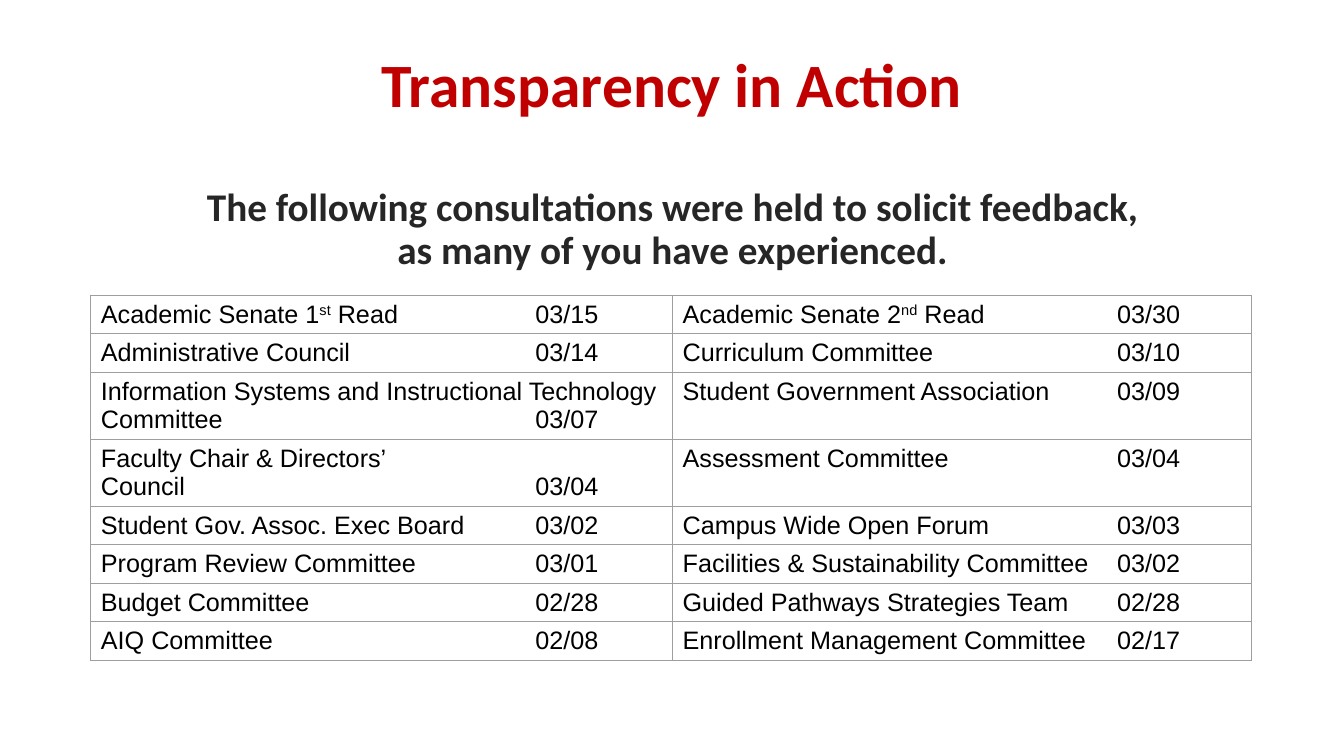
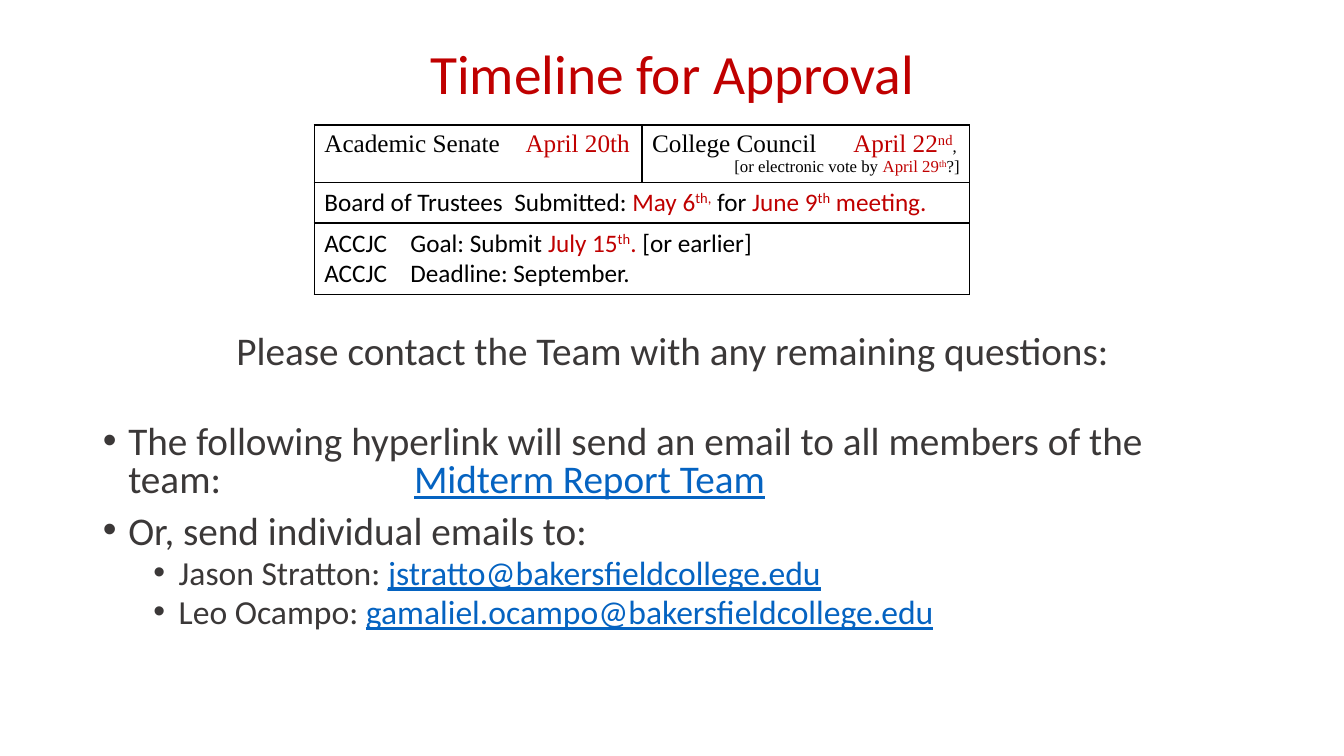
"""Build two slides: the consultations held and the timeline for approval."""
from lxml import etree
from pptx import Presentation
from pptx import util as u
from pptx.dml.color import RGBColor
from pptx.enum import text
from pptx.oxml.ns import qn

COLORS = {"red": "C00000", "dark": "262626", "gray": "3B3838", "link": "0563C1",
          "black": "000000", "rule": "9E9E9E"}
ALIGN = text.PP_ALIGN
LEFT, WIDTH, TITLE_TOP = 2.34, 29.21, 1.02

RED = {"color": "red"}
RED_UP = {"color": "red", "raised": True}
UP = {"raised": True}
LINK = {"color": "link", "underline": True}

CONSULTATIONS = [
    (["Academic Senate 1", ("st", UP), " Read\t03/15"],
     ["Academic Senate 2", ("nd", UP), " Read\t03/30"]),
    (["Administrative Council\t03/14"], ["Curriculum Committee\t03/10"]),
    (["Information Systems and Instructional Technology Committee\t03/07"],
     ["Student Government Association\t03/09"]),
    (["Faculty Chair & Directors’\nCouncil\t03/04"], ["Assessment Committee\t03/04"]),
    (["Student Gov. Assoc. Exec Board\t03/02"], ["Campus Wide Open Forum\t03/03"]),
    (["Program Review Committee\t03/01"], ["Facilities & Sustainability Committee\t03/02"]),
    (["Budget Committee\t02/28"], ["Guided Pathways Strategies Team\t02/28"]),
    (["AIQ Committee\t02/08"], ["Enrollment Management Committee\t02/17"]),
]
TWO_LINE_ROWS = (2, 3)

SERIF = {"font": "Times New Roman", "tab": 5.07}
APPROVALS = [
    (0, 0, [(["Academic Senate\t", ("April 20th", RED)], SERIF)]),
    (0, 1, [(["College Council\t", ("April 22", RED), ("nd", RED_UP), (",", {"size": 12})], SERIF),
            (["[or electronic vote by ", ("April 29", RED), ("th", RED_UP), "?]"],
             {"font": "Times New Roman", "size": 12, "align": ALIGN.RIGHT})]),
    (1, 0, [(["Board of Trustees\tSubmitted: ", ("May 6", RED), ("th,", RED_UP), " for ",
              ("June 9", RED), ("th", RED_UP), (" meeting.", RED)], {"tab": 4.79})]),
    (2, 0, [(["ACCJC\tGoal: Submit ", ("July 15", RED), ("th", RED_UP), (". ", RED),
              "[or earlier]"], {"tab": 2.17}),
            (["ACCJC\tDeadline: September."], {"tab": 2.17})]),
]

TOP_ITEM = {"size": 28, "bullet": True, "indent": 0.64}
SUB_ITEM = {"size": 24, "bullet": True, "indent": 1.91, "level": 1, "before": 5}
CONTACTS = [
    (["Please contact the Team with any remaining questions:"],
     {"size": 28, "align": ALIGN.CENTER, "bullet": False}),
    (["The following hyperlink will send an email to all members of the team:\t",
      ("Midterm Report Team", LINK)], {**TOP_ITEM, "before": 37.5, "tab": 7.84}),
    (["Or, send individual emails to:"], {**TOP_ITEM, "before": 10}),
    (["Jason Stratton: ", ("jstratto@bakersfieldcollege.edu", LINK)], SUB_ITEM),
    (["Leo Ocampo: ", ("gamaliel.ocampo@bakersfieldcollege.edu", LINK)], SUB_ITEM),
]


def place(box, left, top, width, height):
    """Move and size a box, in centimetres."""
    box.left, box.top, box.width, box.height = map(u.Cm, (left, top, width, height))


def format_span(span, size, font, color, bold=False, underline=False, raised=False):
    """Set the character format of one run."""
    span.font.size, span.font.name = u.Pt(size), font
    span.font.bold, span.font.underline = bold, underline
    span.font.color.rgb = RGBColor.from_string(COLORS[color])
    if raised:
        span.font._element.set("baseline", "30000")


def write(para, spans, size=18, font="Calibri", color="black", bold=False, align=ALIGN.LEFT,
          spacing=None, before=0, level=0, indent=0, bullet=None, tab=None):
    """Fill a paragraph with plain or formatted spans."""
    props = para._p.get_or_add_pPr()
    if bullet is not None:
        props.set("marL", str(u.Cm(indent)))
        props.set("indent", str(-u.Cm(0.64) if bullet else 0))
        if bullet:
            etree.SubElement(props, qn("a:buFont"), typeface="Arial")
            etree.SubElement(props, qn("a:buChar"), char="•")
        else:
            etree.SubElement(props, qn("a:buNone"))
    if tab:
        stops = etree.SubElement(props, qn("a:tabLst"))
        etree.SubElement(stops, qn("a:tab"), pos=str(u.Cm(tab)), algn="l")
    para.level, para.alignment = level, align
    para.space_before = u.Pt(before)
    if spacing:
        para.line_spacing = spacing
    base = {"size": size, "font": font, "color": color, "bold": bold}
    for item in spans:
        words, extra = (item, {}) if isinstance(item, str) else item
        for number, line in enumerate(words.split("\n")):
            if number:
                para.add_line_break()
            span = para.add_run()
            span.text = line
            format_span(span, **{**base, **extra})


def write_all(frame, paragraphs, **shared):
    """Write (spans, format) paragraphs into a text frame."""
    for number, (spans, style) in enumerate(paragraphs):
        para = frame.add_paragraph() if number else frame.paragraphs[0]
        write(para, spans, **{**shared, **style})


def fill_placeholder(box, top, height, anchor, paragraphs, **shared):
    """Place a title or body placeholder and write its text."""
    place(box, LEFT, top, WIDTH, height)
    frame = box.text_frame
    frame.word_wrap, frame.auto_size = True, text.MSO_AUTO_SIZE.NONE
    frame.vertical_anchor = anchor
    write_all(frame, paragraphs, **shared)


def add_title(slide, height, paragraphs):
    """Write the centred title in the shared style."""
    fill_placeholder(slide.shapes.title, TITLE_TOP, height, text.MSO_ANCHOR.MIDDLE, paragraphs,
                     color="red", align=ALIGN.CENTER, spacing=0.9)


def add_grid(slide, left, top, widths, heights, color, line):
    """Add an unfilled table with ruled cells."""
    frame = slide.shapes.add_table(len(heights), len(widths), u.Cm(left), u.Cm(top),
                                   u.Cm(sum(widths)), u.Cm(sum(heights)))
    table = frame.table
    table.first_row = table.horz_banding = False
    for column, width in zip(table.columns, widths):
        column.width = u.Cm(width)
    for row, height in zip(table.rows, heights):
        row.height = u.Cm(height)
    for cell in table.iter_cells():
        props = cell._tc.get_or_add_tcPr()
        for side in ("lnL", "lnR", "lnT", "lnB"):
            edge = etree.SubElement(props, qn(f"a:{side}"), w=str(u.Pt(line)))
            paint = etree.SubElement(edge, qn("a:solidFill"))
            etree.SubElement(paint, qn("a:srgbClr"), val=COLORS[color])
        cell.fill.background()
    return table


def build_consultations(deck):
    """Build the slide that lists the consultations."""
    slide = deck.slides.add_slide(deck.slide_layouts[5])
    intro = "The following consultations were held to solicit feedback,\nas many of you have experienced."
    add_title(slide, 6.2, [
        (["Transparency in Action"], {"size": 44, "bold": True}),
        ([intro], {"size": 28, "bold": True, "color": "dark", "before": 48}),
    ])
    heights = [1.69 if row in TWO_LINE_ROWS else 0.97 for row in range(len(CONSULTATIONS))]
    table = add_grid(slide, 2.29, 7.44, [14.66, 14.6], heights, "rule", 0.75)
    for row, pair in enumerate(CONSULTATIONS):
        for column, spans in enumerate(pair):
            write(table.cell(row, column).text_frame.paragraphs[0], spans, font="Arial", tab=10.95)


def build_timeline(deck):
    """Build the slide with the approval dates and the contacts."""
    slide = deck.slides.add_slide(deck.slide_layouts[1])
    add_title(slide, 1.8, [(["Timeline for Approval"], {"size": 39.6})])
    fill_placeholder(slide.placeholders[1], 8.33, 8.1, text.MSO_ANCHOR.TOP, CONTACTS,
                     color="gray", spacing=0.8)
    table = add_grid(slide, 7.92, 3.15, [8.26, 8.26], [1.44, 1.03, 1.79], "black", 1)
    for row in (1, 2):
        table.cell(row, 0).merge(table.cell(row, 1))
    for row, column, paragraphs in APPROVALS:
        write_all(table.cell(row, column).text_frame, paragraphs)


def main():
    """Build and save the deck."""
    deck = Presentation()
    deck.slide_width, deck.slide_height = u.Cm(33.87), u.Cm(19.05)
    build_consultations(deck)
    build_timeline(deck)
    deck.save("out.pptx")


if __name__ == "__main__":
    main()
